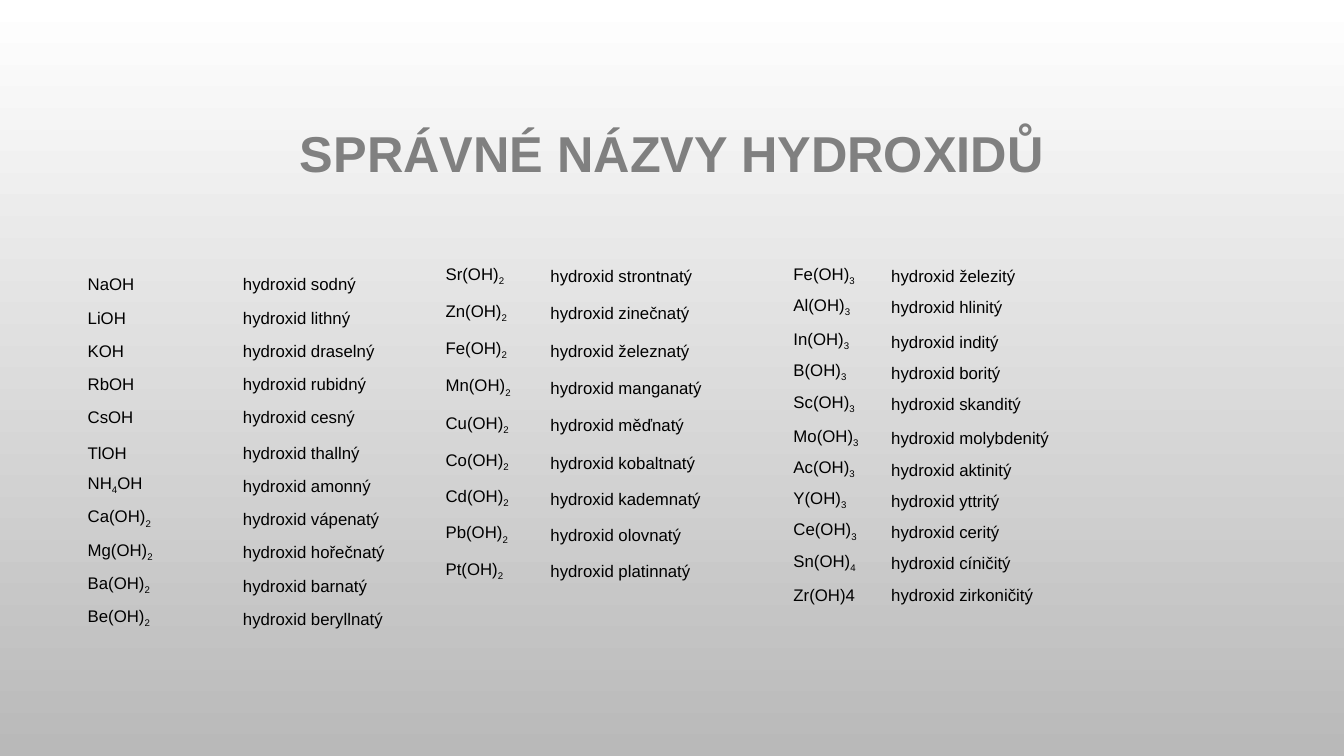
from pptx import Presentation
from pptx.dml.color import RGBColor
from pptx.enum.text import MSO_ANCHOR, PP_ALIGN
from pptx.util import Inches, Pt

CENTER = PP_ALIGN.CENTER
MIDDLE = MSO_ANCHOR.MIDDLE
BOTTOM = MSO_ANCHOR.BOTTOM
WHITE = RGBColor(0xFF, 0xFF, 0xFF)
SILVER = RGBColor(0xB9, 0xB9, 0xB9)
GRAY = RGBColor(0x80, 0x80, 0x80)
BLACK = RGBColor(0, 0, 0)
FONT = "Arial"
NO_STYLE = "{2D5ABB26-0587-4C30-8999-92F81FD0307C}"

FIRST = [
    ("NaOH", "sodný"), ("LiOH", "lithný"), ("KOH", "draselný"),
    ("RbOH", "rubidný"), ("CsOH", "cesný"), ("TlOH", "thallný"),
    ("NH_4OH", "amonný"), ("Ca(OH)_2", "vápenatý"),
    ("Mg(OH)_2", "hořečnatý"), ("Ba(OH)_2", "barnatý"),
    ("Be(OH)_2", "beryllnatý"),
]
SECOND = [
    ("Sr(OH)_2", "strontnatý"), ("Zn(OH)_2", "zinečnatý"),
    ("Fe(OH)_2", "železnatý"), ("Mn(OH)_2", "manganatý"),
    ("Cu(OH)_2", "měďnatý"), ("Co(OH)_2", "kobaltnatý"),
    ("Cd(OH)_2", "kademnatý"), ("Pb(OH)_2", "olovnatý"),
    ("Pt(OH)_2", "platinnatý"),
]
THIRD = [
    ("Fe(OH)_3", "železitý"), ("Al(OH)_3", "hlinitý"),
    ("In(OH)_3", "inditý"), ("B(OH)_3", "boritý"),
    ("Sc(OH)_3", "skanditý"), ("Mo(OH)_3", "molybdenitý"),
    ("Ac(OH)_3", "aktinitý"), ("Y(OH)_3", "yttritý"),
    ("Ce(OH)_3", "ceritý"), ("Sn(OH)_4", "cíničitý"),
    ("Zr(OH)4", "zirkoničitý"),
]


def set_font(p, size, color, bold=False):
    p.font.name = FONT
    p.font.size = Pt(size)
    p.font.bold = bold
    p.font.color.rgb = color


def add_background(s):
    fill = s.background.fill
    fill.gradient()
    fill.gradient_angle = 270
    for stop, position, color in zip(fill.gradient_stops, (0, 1), (WHITE, SILVER)):
        stop.position = position
        stop.color.rgb = color


def add_title(s, left, top, width, height):
    box = s.shapes.add_textbox(Inches(left), Inches(top), Inches(width), Inches(height))
    tf = box.text_frame
    tf.word_wrap = True
    tf.vertical_anchor = MIDDLE
    p = tf.paragraphs[0]
    p.text = "SPRÁVNÉ NÁZVY HYDROXIDŮ"
    p.alignment = CENTER
    p.line_spacing = 0.9
    set_font(p, 36, GRAY, True)


def write_cell(cell, text, spacing):
    cell.fill.background()
    cell.vertical_anchor = BOTTOM
    cell.margin_left = cell.margin_top = cell.margin_right = Inches(0.01)
    cell.margin_bottom = 0
    p = cell.text_frame.paragraphs[0]
    p.line_spacing = spacing
    set_font(p, 12, BLACK)
    base, _, tail = text.partition("_")
    for i, part in enumerate((base, tail[:1], tail[1:])):
        if part:
            r = p.add_run()
            r.text = part
            if i == 1:
                r.font._element.set("baseline", "-25000")


def add_hydroxides(s, left, top, widths, heights, rows, name_spacing=1.0):
    frame = s.shapes.add_table(len(heights), 2, Inches(left), Inches(top),
                               Inches(sum(widths)), Inches(sum(heights)))
    table = frame.table
    table.first_row = table.horz_banding = False
    for style in frame._element.iter("{*}tableStyleId"):
        style.text = NO_STYLE
    for column, width in zip(table.columns, widths):
        column.width = Inches(width)
    for row, height in zip(table.rows, heights):
        row.height = Inches(height)
    for i, (formula, name) in enumerate(rows):
        write_cell(table.cell(i, 0), formula, 1.0)
        write_cell(table.cell(i, 1), f"hydroxid {name}", name_spacing)


def main():
    prs = Presentation()
    prs.slide_width = Inches(13.33)
    prs.slide_height = Inches(7.5)
    s = prs.slides.add_slide(prs.slide_layouts[6])
    add_background(s)
    add_title(s, 1, 0.67, 11.33, 1.76)
    add_hydroxides(s, 0.86, 2.59, (1.54, 1.45),
                   [0.33] * 5 + [0.35] + [0.33] * 5, FIRST, 1.5)
    add_hydroxides(s, 4.41, 2.47, (1.04, 1.94),
                   [0.37] * 6 + [0.36] * 3, SECOND)
    add_hydroxides(s, 7.86, 2.53, (0.97, 1.79),
                   [0.31, 0.31, 0.34] * 2 + [0.31] * 5, THIRD)
    prs.save("out.pptx")


if __name__ == "__main__":
    main()
